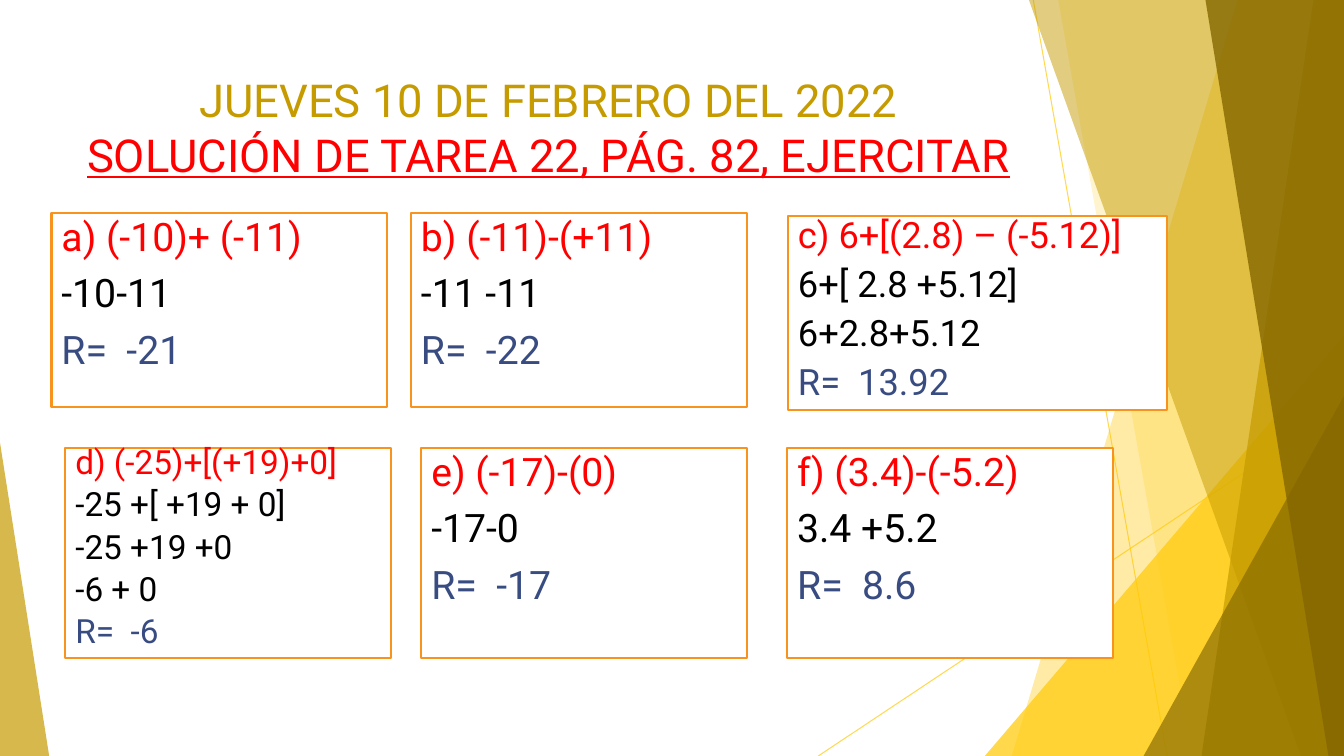
from lxml import etree
from pptx import Presentation
from pptx.dml.color import RGBColor
from pptx.enum.shapes import MSO_CONNECTOR as Connector, MSO_SHAPE as Shape
from pptx.enum.text import MSO_ANCHOR as Anchor, MSO_AUTO_SIZE as AutoSize, PP_ALIGN as Align
from pptx.oxml.ns import qn
from pptx.util import Cm, Pt

WIDTH, HEIGHT = 33.87, 19.05
FONT = "Roboto"
YELLOW, GOLD, BROWN = "FFCA08", "C59B00", "846700"
RED, BLACK, BLUE, ORANGE, WHITE = "FF0000", "000000", "384C81", "F8931D", "FFFFFF"

# Decoration: line ends, then facets from back to front
RAYS = [(26.04, 0, 29.41, HEIGHT), (WIDTH, 10.24, 20.62, HEIGHT)]
# A band gives its left edge at the top and at the bottom of the slide,
# a triangle its width, height and apex side (0 left, 1 right)
FACETS = [
    ("band", (31.19, 25.5), YELLOW, 36),
    ("band", (26.67, 30.05), YELLOW, 20),
    ("triangle", (9.05, 10.59, 1), YELLOW, 72),
    ("band", (25.93, 32.79), GOLD, 50),
    ("band", (33.1, 30.28), GOLD, 70),
    ("band", (30.38, 33.48), BROWN, 80),
    ("triangle", (5.05, 9.07, 1), BROWN, 66),
    ("triangle", (1.24, 7.9, 0), GOLD, 70),
]

# Exercises: box, font size, line spacing, steps from question to result
EXERCISES = [
    ((1.3, 5.36, 8.46, 4.9), 28, 0.9, ["a) (-10)+ (-11)", "-10-11", "R=  -21"]),
    ((10.36, 5.36, 8.46, 4.9), 28, 0.9, ["b) (-11)-(+11)", "-11 -11", "R=  -22"]),
    ((19.86, 5.44, 9.55, 4.9), 25.9, 0.8,
     ["c) 6+[(2.8) – (-5.12)]", "6+[ 2.8 +5.12]", "6+2.8+5.12", "R=  13.92"]),
    ((1.65, 11.28, 8.2, 5.31), 23.8, 0.7,
     ["d) (-25)+[(+19)+0]", "-25 +[ +19 + 0]", "-25 +19 +0", "-6 + 0", "R=  -6"]),
    ((10.62, 11.28, 8.2, 5.31), 28, 0.9, ["e) (-17)-(0)", "-17-0", "R=  -17"]),
    ((19.84, 11.28, 8.2, 5.31), 28, 0.9, ["f) (3.4)-(-5.2)", "3.4 +5.2", "R=  8.6"]),
]


def paint(color_format, color, opacity=100):
    """Set a solid colour and, if wanted, its opacity in percent."""
    color_format.rgb = RGBColor.from_string(color)
    if opacity < 100:
        for element in color_format._xFill.iter(qn("a:srgbClr")):
            etree.SubElement(element, qn("a:alpha")).set("val", str(opacity * 1000))


def fill_shape(shape, color, opacity=100):
    shape.shadow.inherit = False
    shape.fill.solid()
    paint(shape.fill.fore_color, color)
    if opacity < 100:
        element = shape._element.spPr.find(qn("a:solidFill"))[0]
        etree.SubElement(element, qn("a:alpha")).set("val", str(opacity * 1000))


def add_ray(slide, ends):
    ray = slide.shapes.add_connector(Connector.STRAIGHT, *map(Cm, ends))
    ray.line.width = Pt(0.75)
    ray.line.fill.solid()
    paint(ray.line.fill.fore_color, YELLOW)
    properties = ray._element.spPr
    element = next(properties.iter(qn("a:srgbClr")))
    etree.SubElement(element, qn("a:alpha")).set("val", "70000")
    etree.SubElement(properties, qn("a:effectLst"))


def add_band(slide, top_x, bottom_x):
    builder = slide.shapes.build_freeform(Cm(top_x), 0)
    corners = [(WIDTH, 0), (WIDTH, HEIGHT), (bottom_x, HEIGHT)]
    builder.add_line_segments([(Cm(x), Cm(y)) for x, y in corners], close=True)
    return builder.convert_to_shape()


def add_triangle(slide, width, height, apex):
    left = (WIDTH - width) * apex
    triangle = slide.shapes.add_shape(
        Shape.ISOSCELES_TRIANGLE, Cm(left), Cm(HEIGHT - height), Cm(width), Cm(height))
    triangle.adjustments[0] = apex
    return triangle


def add_decoration(slide):
    for ends in RAYS:
        add_ray(slide, ends)
    makers = {"band": add_band, "triangle": add_triangle}
    for kind, geometry, color, opacity in FACETS:
        facet = makers[kind](slide, *geometry)
        fill_shape(facet, color, opacity)
        facet.line.fill.background()


def fill_title(slide, box):
    title = slide.shapes.title
    slide.shapes._spTree.append(title._element)  # in front of the decoration
    title.left, title.top, title.width, title.height = map(Cm, box)
    frame = title.text_frame
    frame.word_wrap = True
    frame.auto_size = AutoSize.NONE
    frame.vertical_anchor = Anchor.TOP
    paragraph = frame.paragraphs[0]
    paragraph.alignment = Align.CENTER
    paragraph.font.name = FONT
    paragraph.font.size = Pt(32.4)
    date = paragraph.add_run()
    date.text = "JUEVES 10 DE FEBRERO DEL 2022"
    paint(date.font.color, GOLD)
    paragraph.add_line_break()
    task = paragraph.add_run()
    task.text = "SOLUCIÓN DE TAREA 22, PÁG. 82, EJERCITAR"
    task.font.underline = True
    paint(task.font.color, RED)


def add_exercise(slide, box, size, spacing, steps):
    card = slide.shapes.add_shape(Shape.RECTANGLE, *map(Cm, box))
    fill_shape(card, WHITE)
    paint(card.line.color, ORANGE)
    card.line.width = Pt(1.5)
    frame = card.text_frame
    frame.word_wrap = True
    frame.vertical_anchor = Anchor.TOP
    frame.text = "\n".join(steps)
    # Question in red, working in black, result in blue
    colors = [RED] + [BLACK] * (len(steps) - 2) + [BLUE]
    for paragraph, color in zip(frame.paragraphs, colors):
        paragraph.alignment = Align.LEFT
        paragraph.line_spacing = spacing
        paragraph.space_before = Pt(10)
        paragraph.font.name = FONT
        paragraph.font.size = Pt(size)
        paint(paragraph.font.color, color)


def main():
    presentation = Presentation()
    presentation.slide_width, presentation.slide_height = Cm(WIDTH), Cm(HEIGHT)
    slide = presentation.slides.add_slide(presentation.slide_layouts[5])
    add_decoration(slide)
    fill_title(slide, (1.88, 1.7, 23.88, 3.66))
    for exercise in EXERCISES:
        add_exercise(slide, *exercise)
    presentation.save("out.pptx")


if __name__ == "__main__":
    main()
